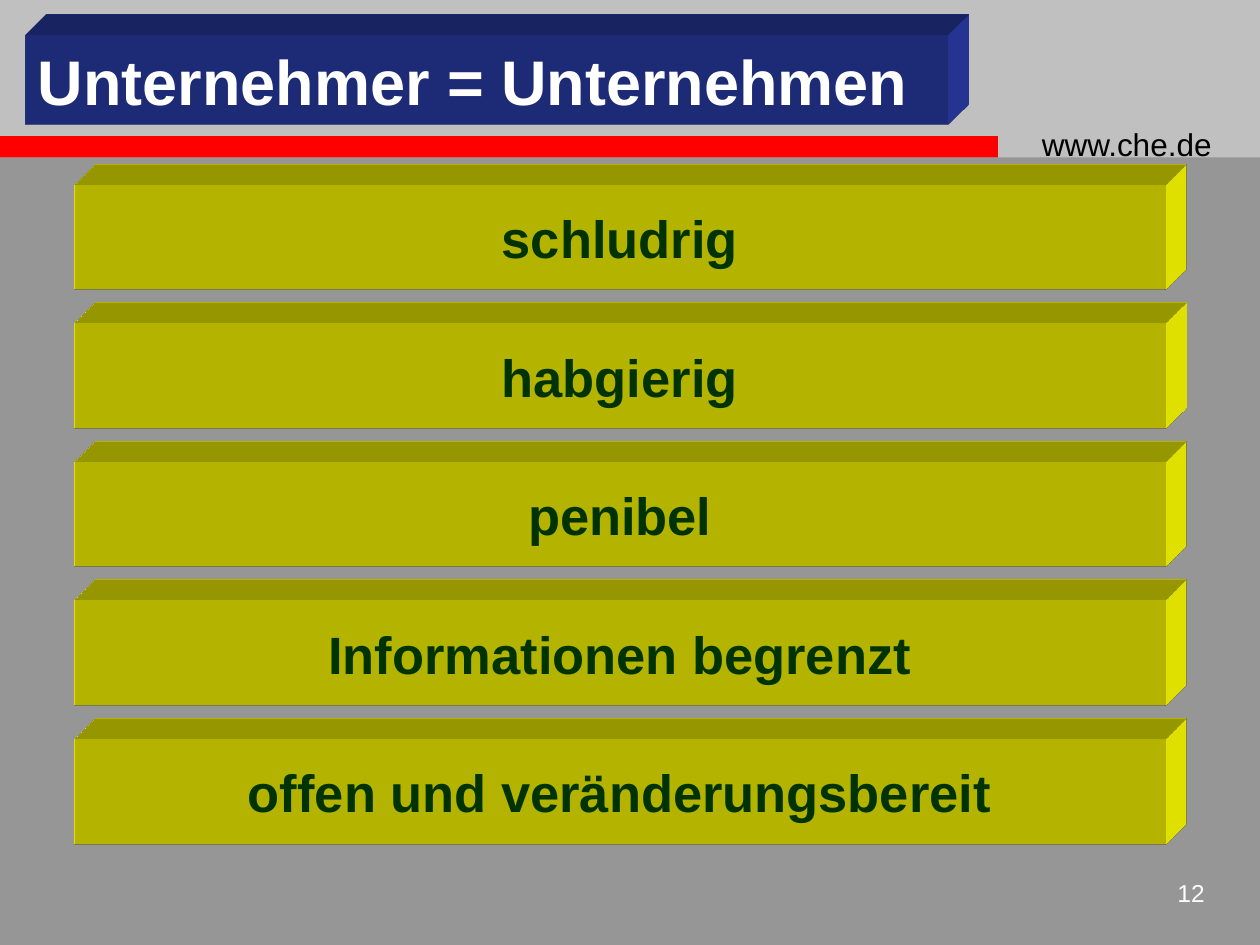
"""Build the slide that sets the entrepreneur beside the enterprise."""
from lxml import etree
from pptx import Presentation
from pptx.dml.color import RGBColor
from pptx.enum import shapes, text
from pptx.util import Inches, Pt

GREY = RGBColor(0x96, 0x96, 0x96)
SILVER = RGBColor(0xC0, 0xC0, 0xC0)
RED = RGBColor(0xFF, 0x00, 0x00)
YELLOW = RGBColor(0xFF, 0xFF, 0x00)
BLUE = RGBColor(0x29, 0x3B, 0xA5)
DARK_GREEN = RGBColor(0x00, 0x33, 0x00)
BLACK = RGBColor(0x00, 0x00, 0x00)
WHITE = RGBColor(0xFF, 0xFF, 0xFF)

TRAITS = ["schludrig", "habgierig", "penibel", "Informationen begrenzt",
          "offen und veränderungsbereit"]
FIRST_TOP, PITCH = 1.47, 1.1

DEPTH = """<a:wrap xmlns:a="http://schemas.openxmlformats.org/drawingml/2006/main">
<a:scene3d><a:camera prst="legacyObliqueTopRight"/>
<a:lightRig rig="legacyFlat3" dir="b"/></a:scene3d>
<a:sp3d extrusionH="430200" prstMaterial="legacyMatte">
<a:bevelT w="13500" h="13500" prst="angle"/><a:bevelB w="13500" h="13500" prst="angle"/>
<a:extrusionClr><a:srgbClr val="{color}"/></a:extrusionClr></a:sp3d></a:wrap>"""


def write(target, content, size, color, bold=False, align=text.PP_ALIGN.LEFT,
          anchor=text.MSO_ANCHOR.TOP, wrap=True):
    """Put formatted text into a shape."""
    frame = target.text_frame
    frame.text = content
    frame.word_wrap = wrap
    frame.auto_size = text.MSO_AUTO_SIZE.NONE
    frame.vertical_anchor = anchor
    line = frame.paragraphs[0]
    line.alignment = align
    font = line.runs[0].font
    font.name, font.size, font.bold = "Arial", Pt(size), bold
    font.color.rgb = color


def add_bar(slide, left, top, width, height, color):
    """Add a plain rectangle without outline."""
    bar = slide.shapes.add_shape(shapes.MSO_SHAPE.RECTANGLE, Inches(left),
                                 Inches(top), Inches(width), Inches(height))
    bar.shadow.inherit = False
    bar.fill.solid()
    bar.fill.fore_color.rgb = color
    bar.line.fill.background()
    return bar


def add_block(slide, left, top, width, height, color):
    """Add a rectangle extruded to the upper right."""
    block = add_bar(slide, left, top, width, height, color)
    for part in list(etree.fromstring(DEPTH.format(color=color))):
        block._element.spPr.append(part)
    return block


def add_label(slide, content, left, top, width, height, **style):
    """Add a text box."""
    label = slide.shapes.add_textbox(Inches(left), Inches(top),
                                     Inches(width), Inches(height))
    write(label, content, **style)


def add_title(slide, content, left, top, width, height):
    """Place the title on its extruded block."""
    add_block(slide, left, top, width, height, BLUE)
    title = slide.shapes.title
    title.left, title.top = Inches(left), Inches(top)
    title.width, title.height = Inches(width), Inches(height)
    write(title, content, size=36, color=WHITE, bold=True,
          anchor=text.MSO_ANCHOR.MIDDLE, wrap=False)
    slide.shapes._spTree.append(title._element)


def main():
    """Build and save the slide."""
    deck = Presentation()
    deck.slide_width, deck.slide_height = Inches(10), Inches(7.5)
    slide = deck.slides.add_slide(deck.slide_layouts[5])
    slide.background.fill.solid()
    slide.background.fill.fore_color.rgb = GREY

    add_bar(slide, 0, 0, 10, 1.25, SILVER)
    add_bar(slide, 0, 1.08, 7.92, 0.17, RED)
    add_label(slide, "www.che.de", 8.17, 0.94, 1.75, 0.4, size=18, color=BLACK)
    add_label(slide, "12", 9.08, 6.92, 0.58, 0.42, size=14, color=WHITE,
              align=text.PP_ALIGN.RIGHT)
    for row, trait in enumerate(TRAITS):
        block = add_block(slide, 0.59, FIRST_TOP + row * PITCH, 8.66, 0.83, YELLOW)
        write(block, trait, size=30, color=DARK_GREEN, bold=True,
              align=text.PP_ALIGN.CENTER, anchor=text.MSO_ANCHOR.MIDDLE, wrap=False)
    add_title(slide, "Unternehmer = Unternehmen", 0.2, 0.28, 7.32, 0.71)
    deck.save("out.pptx")


if __name__ == "__main__":
    main()
